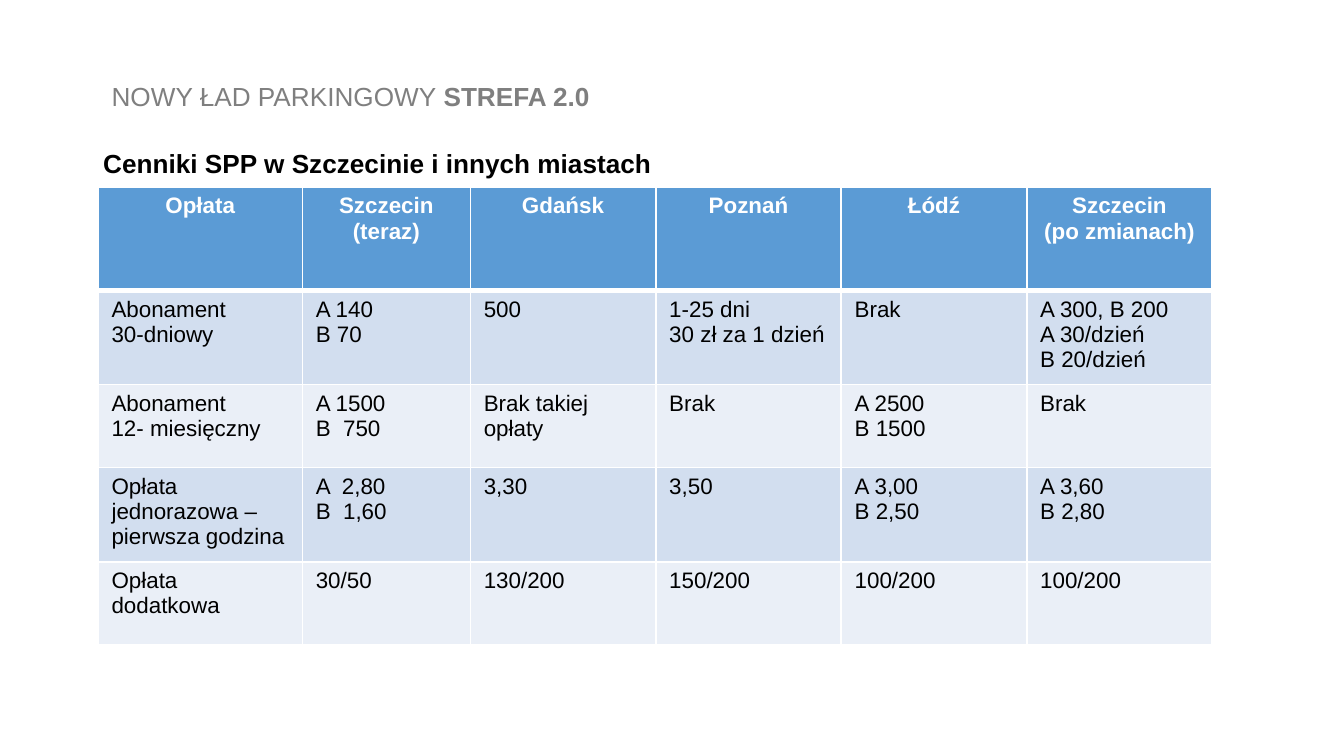
import pptx
import pptx.util
import pptx.dml.color
import pptx.enum.text
import pptx.oxml
import pptx.oxml.ns

Inches = pptx.util.Inches
Align = pptx.enum.text.PP_ALIGN
Anchor = pptx.enum.text.MSO_ANCHOR

COLS = [1.52, 1.25, 1.38, 1.38, 1.38, 1.38]
ROWS = [0.77, 0.7, 0.62, 0.7, 0.62]
# \n starts a paragraph, \v breaks a line
PRICES = [
    ["Opłata", "Szczecin\n(teraz)", "Gdańsk", "Poznań", "Łódź",
     "Szczecin\n(po zmianach)"],
    ["Abonament \v30-dniowy", "A 140\nB 70", "500",
     "1-25 dni\n30 zł za 1 dzień", "Brak",
     "A 300, B 200\nA 30/dzień\nB 20/dzień"],
    ["Abonament \v12- miesięczny", "A 1500\nB  750", "Brak takiej opłaty",
     "Brak", "A 2500\nB 1500", "Brak"],
    ["Opłata jednorazowa – pierwsza godzina", "A  2,80\nB  1,60", "3,30",
     "3,50", "A 3,00\nB 2,50", "A 3,60\nB 2,80"],
    ["Opłata dodatkowa", "30/50", "130/200", "150/200", "100/200", "100/200"],
]


def color(code):
    return pptx.dml.color.RGBColor.from_string(code)


class Deck:
    font = "Arial"
    black, white, gray = "000000", "FFFFFF", "7F7F7F"
    head, bands = "5B9BD5", ["D2DEEF", "EAEFF7"]

    def __init__(self, wide):
        self.prs = pptx.Presentation()
        # Widescreen, 16 to 9
        self.prs.slide_width = Inches(wide)
        self.prs.slide_height = Inches(wide * 9 / 16)
        self.slide = self.prs.slides.add_slide(self.prs.slide_layouts[5])

    def style(self, run, size, code, bold=False):
        font = run.font
        font.name, font.size, font.bold = self.font, pptx.util.Pt(size), bold
        font.color.rgb = color(code)

    def place(self, shape, box):
        shape.left, shape.top, shape.width, shape.height = map(Inches, box)

    def title(self, box, parts):
        shape = self.slide.shapes.title
        self.place(shape, box)
        frame = shape.text_frame
        frame.auto_size = pptx.enum.text.MSO_AUTO_SIZE.NONE
        frame.vertical_anchor = Anchor.TOP
        para = frame.paragraphs[0]
        para.alignment = Align.LEFT
        for text, bold in parts:
            run = para.add_run()
            run.text = text
            self.style(run, 14, self.gray, bold)

    def text(self, box, text):
        frame = self.slide.shapes.add_textbox(*map(Inches, box)).text_frame
        frame.word_wrap = False
        frame.text = text
        self.style(frame.paragraphs[0].runs[0], 14, self.black, True)

    def border(self, cell, side, width):
        line = pptx.oxml.parse_xml(
            f'<a:ln{side} {pptx.oxml.ns.nsdecls("a")} w="{pptx.util.Pt(width)}">'
            f'<a:solidFill><a:srgbClr val="{self.white}"/></a:solidFill>'
            f'</a:ln{side}>')
        cell._tc.get_or_add_tcPr().append(line)

    def cell(self, cell, text, row):
        top = row == 0
        # Borders come before the fill in the cell properties
        for side in "LRTB":
            thick = (side, row) in (("B", 0), ("T", 1))
            self.border(cell, side, 3 if thick else 1)
        cell.fill.solid()
        cell.fill.fore_color.rgb = color(
            self.head if top else self.bands[(row - 1) % 2])
        cell.text_frame.text = text
        for para in cell.text_frame.paragraphs:
            para.alignment = Align.CENTER if top else Align.LEFT
            for run in para.runs:
                self.style(run, 12, self.white if top else self.black, top)

    def table(self, left, top, cols, rows, data):
        grid = self.slide.shapes.add_table(
            len(rows), len(cols), Inches(left), Inches(top),
            Inches(sum(cols)), Inches(sum(rows))).table
        for col, wide in zip(grid.columns, cols):
            col.width = Inches(wide)
        for row, high in zip(grid.rows, rows):
            row.height = Inches(high)
        for r, line in enumerate(data):
            for c, text in enumerate(line):
                self.cell(grid.cell(r, c), text, r)


def main():
    deck = Deck(10)
    # Headings
    deck.title((0.73, 0.55, 8.22, 0.34),
               [("NOWY ŁAD PARKINGOWY ", False), ("STREFA 2.0", True)])
    deck.text((0.67, 1.05, 4.37, 0.34),
              "Cenniki SPP w Szczecinie i innych miastach")
    # Price table
    deck.table(0.73, 1.39, COLS, ROWS, PRICES)
    deck.prs.save("out.pptx")


if __name__ == "__main__":
    main()
